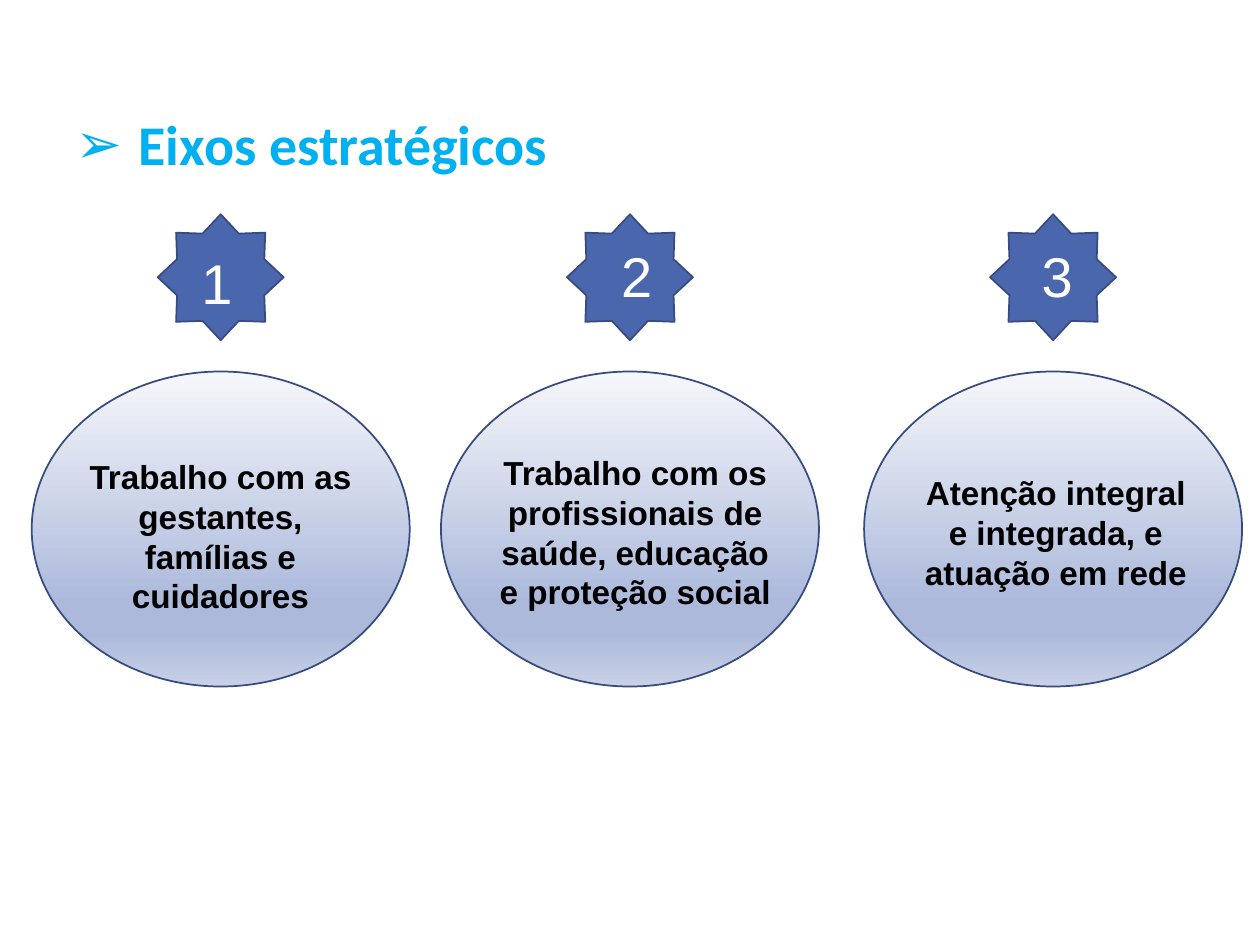
"""Build the slide on the three strategic axes."""
from dataclasses import dataclass

from lxml.etree import SubElement
from pptx import Presentation
from pptx.dml.color import RGBColor
from pptx.enum.shapes import MSO_SHAPE
from pptx.enum.text import MSO_ANCHOR, MSO_AUTO_SIZE, PP_ALIGN
from pptx.oxml.ns import qn
from pptx.util import Cm, Pt

TITLE = "Eixos estratégicos"
AXES = [
    {"number": "1", "text": "Trabalho com as gestantes, famílias e cuidadores",
     "left": 0.64, "number_at": (3.81, 4.88), "text_at": (1.27, 9.07, 6.35, 3.51)},
    {"number": "2", "text": "Trabalho com os profissionais de saúde, educação e proteção social",
     "left": 8.89, "number_at": (12.27, 4.75), "text_at": (9.73, 8.99, 6.15, 3.51)},
    {"number": "3", "text": "Atenção integral e integrada, e atuação em rede",
     "left": 17.42, "number_at": (20.75, 4.75), "text_at": (18.21, 9.4, 6.15, 2.69)},
]
OVAL_TOP, OVAL_WIDTH, OVAL_HEIGHT = 7.49, 7.62, 6.35
STAR_TOP, STAR_SIZE = 4.32, 2.54
NUMBER_SIZE = (1.07, 1.63)


@dataclass(frozen=True)
class Theme:
    """Colours, fonts and type sizes."""
    title: str = "00B0F0"
    star: str = "4A66AC"
    outline: str = "374B7F"
    number: str = "FFFFFF"
    text: str = "000000"
    gradient: tuple = ((0, "F6F7FB"), (74, "ACB9DB"), (83, "ACB9DB"), (100, "C8D1E7"))
    title_font: str = "Calibri"
    body_font: str = "Arial"
    large: int = 32
    small: int = 19


THEME = Theme()


def format_text(paragraph, font_name, size, color, bold, alignment):
    """Format a paragraph and its runs."""
    paragraph.alignment = alignment
    for span in paragraph.runs:
        span.font.name = font_name
        span.font.size = Pt(size)
        span.font.bold = bold
        span.font.color.rgb = RGBColor.from_string(color)


def add_title(page):
    """Place the title with its arrow bullet."""
    box = page.shapes.title
    box.left, box.top, box.width, box.height = Cm(1.27), Cm(2.13), Cm(21.89), Cm(1.7)
    frame = box.text_frame
    frame.text = TITLE
    frame.vertical_anchor = MSO_ANCHOR.MIDDLE
    paragraph = frame.paragraphs[0]
    paragraph.line_spacing = 0.9
    format_text(paragraph, THEME.title_font, THEME.large, THEME.title, True, PP_ALIGN.LEFT)
    properties = paragraph._p.get_or_add_pPr()
    properties.set("marL", str(Cm(1.27)))
    properties.set("indent", str(-Cm(1.27)))
    SubElement(properties, qn("a:buFont"), typeface=THEME.body_font)
    SubElement(properties, qn("a:buChar"), char="➢")


def add_outlined(page, kind, *place):
    """Add a preset shape with the common outline."""
    shape = page.shapes.add_shape(kind, *map(Cm, place))
    shape.shadow.inherit = False
    shape.line.color.rgb = RGBColor.from_string(THEME.outline)
    shape.line.width = Pt(1)
    return shape


def fill_gradient(shape):
    """Fill a shape with the vertical theme gradient."""
    shape.fill.gradient()
    gradient = shape._element.spPr.find(qn("a:gradFill"))
    stops = gradient.find(qn("a:gsLst"))
    for stop in list(stops):
        stops.remove(stop)
    for position, color in THEME.gradient:
        stop = SubElement(stops, qn("a:gs"), pos=str(position * 1000))
        SubElement(stop, qn("a:srgbClr"), val=color)
    gradient.find(qn("a:lin")).set("ang", "5400000")


def add_text(page, text, place, size, color, bold, alignment):
    """Add a wrapping text box."""
    box = page.shapes.add_textbox(*map(Cm, place))
    frame = box.text_frame
    frame.word_wrap = True
    frame.auto_size = MSO_AUTO_SIZE.SHAPE_TO_FIT_TEXT
    frame.text = text
    format_text(frame.paragraphs[0], THEME.body_font, size, color, bold, alignment)


def add_axis(page, axis):
    """Add the oval, star, number and text of one axis."""
    oval = add_outlined(page, MSO_SHAPE.OVAL, axis["left"], OVAL_TOP, OVAL_WIDTH, OVAL_HEIGHT)
    fill_gradient(oval)
    star_left = axis["left"] + (OVAL_WIDTH - STAR_SIZE) / 2
    star = add_outlined(page, MSO_SHAPE.STAR_8_POINT, star_left, STAR_TOP, STAR_SIZE, STAR_SIZE)
    star.fill.solid()
    star.fill.fore_color.rgb = RGBColor.from_string(THEME.star)
    add_text(page, axis["number"], axis["number_at"] + NUMBER_SIZE,
             THEME.large, THEME.number, False, PP_ALIGN.LEFT)
    add_text(page, axis["text"], axis["text_at"],
             THEME.small, THEME.text, True, PP_ALIGN.CENTER)


def main():
    """Build and save the deck."""
    deck = Presentation()
    deck.slide_width, deck.slide_height = Cm(25.4), Cm(19.05)
    page = deck.slides.add_slide(deck.slide_layouts[5])
    add_title(page)
    for axis in AXES:
        add_axis(page, axis)
    deck.save("out.pptx")


if __name__ == "__main__":
    main()
